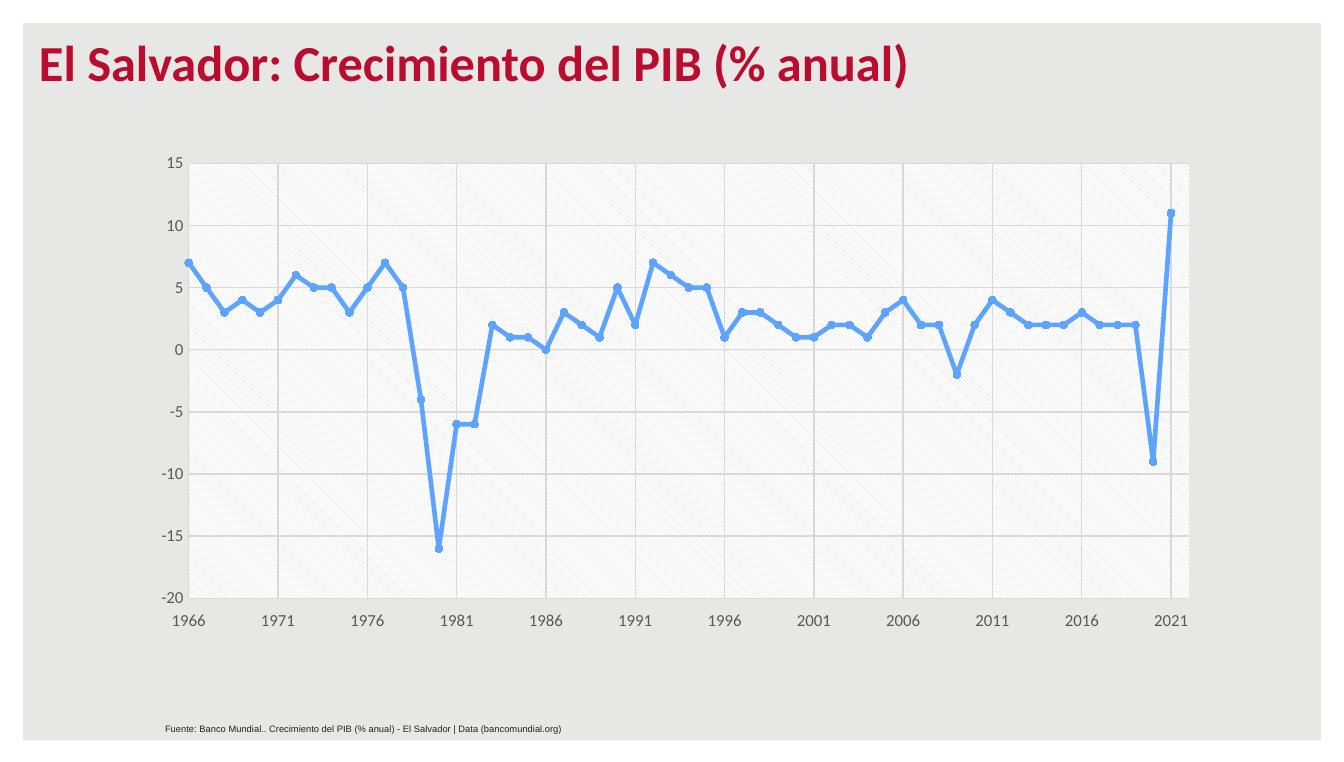
import pptx
import pptx.chart.data
import pptx.dml.color
import pptx.enum.chart
import pptx.enum.dml
import pptx.enum.shapes
import pptx.enum.text
import pptx.oxml
import pptx.oxml.ns
import pptx.util

SCALE = 9144
BLUE = "5EA4FF"
GRID = "D9D9D9"
FIRST_YEAR = 1966
GROWTH = [
    7, 5, 3, 4, 3, 4, 6, 5, 5, 3, 5, 7, 5, -4,
    -16, -6, -6, 2, 1, 1, 0, 3, 2, 1, 5, 2, 7, 6,
    5, 5, 1, 3, 3, 2, 1, 1, 2, 2, 1, 3, 4, 2,
    2, -2, 2, 4, 3, 2, 2, 2, 3, 2, 2, 2, -9, 11,
]


def px(*lengths):
    """Turn lengths in px (100 to the inch) into EMU."""
    return [pptx.util.Emu(length * SCALE) for length in lengths]


def paint(color_format, color):
    """Give a colour format a hex colour."""
    color_format.rgb = pptx.dml.color.RGBColor.from_string(color)


def fill_solid(fill, color):
    """Make a fill solid in a hex colour."""
    fill.solid()
    paint(fill.fore_color, color)


def style_font(font, name, size, color, bold=False):
    """Set the name, size, colour and weight of a font."""
    font.name = name
    font.size = pptx.util.Pt(size)
    font.bold = bold
    paint(font.color, color)


def style_line(line, color, width):
    """Set the colour and width of a line."""
    fill_solid(line.fill, color)
    line.width = pptx.util.Pt(width)


def add_frame(page):
    """Put the white border behind everything else on the page."""
    frame = page.shapes.add_shape(
        pptx.enum.shapes.MSO_SHAPE.FRAME, *px(0, 0, 1000, 568))
    frame.adjustments[0] = 0.03
    frame.shadow.inherit = False
    fill_solid(frame.fill, "FFFFFF")
    frame.line.fill.background()
    page.shapes.element.insert(2, frame.element)


def write_text(box, text, anchor, **font):
    """Write one left-aligned paragraph in a box."""
    frame = box.text_frame
    frame.text = text
    frame.word_wrap = True
    frame.vertical_anchor = anchor
    para = frame.paragraphs[0]
    para.alignment = pptx.enum.text.PP_ALIGN.LEFT
    style_font(para.runs[0].font, **font)


def style_axis(axis, low, high, label_position):
    """Set the range, labels, line and gridlines of an axis."""
    axis.minimum_scale, axis.maximum_scale, axis.major_unit = low, high, 5
    axis.major_tick_mark = pptx.enum.chart.XL_TICK_MARK.NONE
    axis.minor_tick_mark = pptx.enum.chart.XL_TICK_MARK.NONE
    axis.tick_label_position = label_position
    axis.has_title = False
    axis.has_major_gridlines = True
    style_font(axis.tick_labels.font, "Calibri", 9, "595959")
    axis.tick_labels.number_format = "General"
    axis.tick_labels.number_format_is_linked = False
    style_line(axis.major_gridlines.format.line, GRID, 0.75)
    style_line(axis.format.line, GRID, 0.75)
    color = axis.format.line._ln.find(".//" + pptx.oxml.ns.qn("a:srgbClr"))
    color.append(pptx.oxml.parse_xml(
        f'<a:alpha {pptx.oxml.ns.nsdecls("a")} val="54000"/>'))


def style_plot_area(chart):
    """Fix the inner plot area and fill it with a hatch."""
    area = chart._chartSpace.chart.plotArea
    for layout in area.findall(pptx.oxml.ns.qn("c:layout")):
        area.remove(layout)
    places = "".join(f'<c:{name} val="{value}"/>' for name, value in
                     [("x", 0.045), ("y", 0.034), ("w", 0.92), ("h", 0.875)])
    area.insert(0, pptx.oxml.parse_xml(
        f'<c:layout {pptx.oxml.ns.nsdecls("c")}><c:manualLayout>'
        '<c:layoutTarget val="inner"/><c:xMode val="edge"/>'
        f'<c:yMode val="edge"/>{places}</c:manualLayout></c:layout>'))
    area.append(pptx.oxml.parse_xml(
        f'<c:spPr {pptx.oxml.ns.nsdecls("c", "a")}>'
        f'<a:pattFill prst="ltDnDiag"><a:fgClr><a:srgbClr val="{GRID}"/>'
        '</a:fgClr><a:bgClr><a:srgbClr val="FFFFFF"/></a:bgClr></a:pattFill>'
        '<a:ln><a:noFill/></a:ln></c:spPr>'))


def add_growth_chart(page):
    """Add the scatter chart of yearly growth."""
    data = pptx.chart.data.XyChartData()
    points = data.add_series("Series 1")
    for year, growth in enumerate(GROWTH, FIRST_YEAR):
        points.add_data_point(year, growth)
    chart = page.shapes.add_chart(
        pptx.enum.chart.XL_CHART_TYPE.XY_SCATTER_LINES,
        *px(104, 109, 809, 370), data).chart
    chart.has_legend = False
    chart.has_title = False
    style_font(chart.font, "Calibri", 10, "000000")
    positions = pptx.enum.chart.XL_TICK_LABEL_POSITION
    style_axis(chart.category_axis, FIRST_YEAR, 2022, positions.LOW)
    style_axis(chart.value_axis, -20, 15, positions.NEXT_TO_AXIS)
    style_plot_area(chart)
    chart.plots[0].vary_by_categories = False
    series = chart.plots[0].series[0]
    series.smooth = False
    style_line(series.format.line, BLUE, 2.5)
    series.marker.style = pptx.enum.chart.XL_MARKER_STYLE.CIRCLE
    series.marker.size = 4
    fill_solid(series.marker.format.fill, BLUE)
    style_line(series.marker.format.line, BLUE, 0.75)


def main():
    """Build the slide and save the deck."""
    deck = pptx.Presentation()
    deck.slide_width, deck.slide_height = px(1000, 567)
    page = deck.slides.add_slide(deck.slide_layouts[5])
    fill_solid(page.background.fill, "E7E7E5")
    add_frame(page)
    title = page.shapes.title
    title.left, title.top, title.width, title.height = px(19, 15, 959, 58)
    write_text(title, "El Salvador: Crecimiento del PIB (% anual)",
               pptx.enum.text.MSO_ANCHOR.BOTTOM,
               name="Calibri", size=27, color="BA0C2F", bold=True)
    add_growth_chart(page)
    source = page.shapes.add_textbox(*px(113, 533, 854, 19))
    write_text(source, "Fuente: Banco Mundial.. Crecimiento del PIB (% anual) - "
               "El Salvador | Data (bancomundial.org)",
               pptx.enum.text.MSO_ANCHOR.TOP,
               name="Arial", size=5, color="202124")
    deck.save("out.pptx")


if __name__ == "__main__":
    main()
